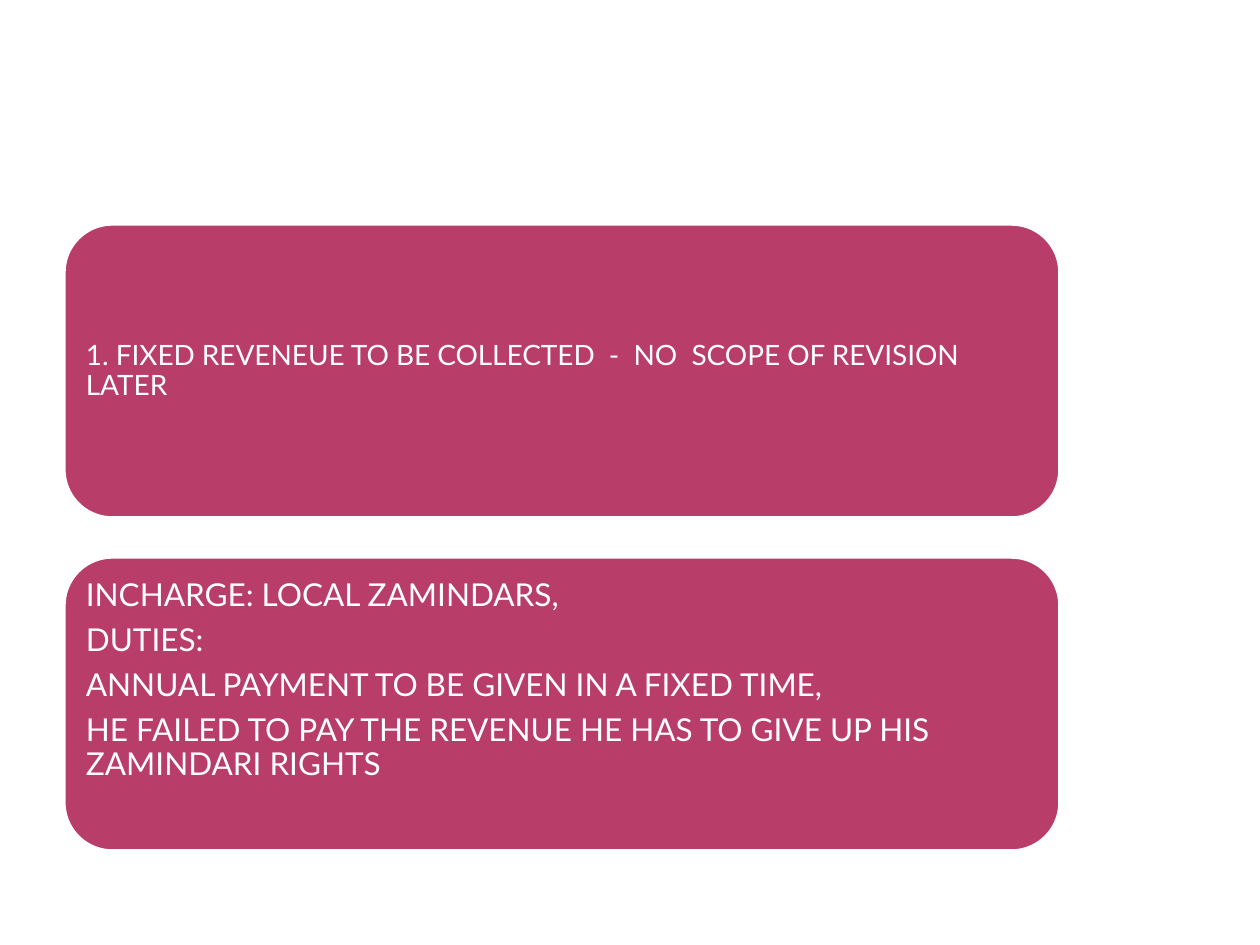
"""Build a slide with two rounded panels on fixed revenue and zamindar duties."""
from pptx import Presentation
from pptx.dml.color import RGBColor
from pptx.enum.shapes import MSO_SHAPE as Shape
from pptx.enum.text import MSO_ANCHOR as Anchor
from pptx.util import Inches, Pt

ROSE = RGBColor(0xB8, 0x3D, 0x68)
WHITE = RGBColor(0xFF, 0xFF, 0xFF)
FONT = "Lato"
SCALE = Inches(1) / 126
LEFT, TOP, WIDTH, HEIGHT = 63, 223, 998, 296
PITCH, EDGE, INSET = 333, 14, 9

PANELS = [
    (["1. FIXED REVENEUE TO BE COLLECTED  -  NO  SCOPE OF REVISION LATER"],
     16, Anchor.MIDDLE),
    (["INCHARGE: LOCAL ZAMINDARS,",
      "DUTIES:",
      "ANNUAL PAYMENT TO BE GIVEN IN A FIXED TIME,",
      "HE FAILED TO PAY THE REVENUE HE HAS TO GIVE UP HIS ZAMINDARI RIGHTS"],
     18, Anchor.TOP),
]


def px(*sizes):
    return [round(size * SCALE) for size in sizes]


def write(frame, lines, size=18, color=WHITE, font=FONT, lead=0.9, gap=0.35):
    for i, line in enumerate(lines):
        para = frame.add_paragraph() if i else frame.paragraphs[0]
        para.line_spacing = lead
        para.space_after = Pt(round(size * gap, 1))
        run = para.add_run()
        run.text = line
        run.font.name = font
        run.font.size = Pt(size)
        run.font.color.rgb = color


class Deck:
    def __init__(self):
        self.show = Presentation()
        self.show.slide_width, self.show.slide_height = px(1260, 945)
        self.slide = self.show.slides.add_slide(self.show.slide_layouts[6])

    def panel(self, *place):
        shape = self.slide.shapes.add_shape(Shape.ROUNDED_RECTANGLE, *px(*place))
        shape.shadow.inherit = False
        shape.fill.solid()
        shape.fill.fore_color.rgb = ROSE
        shape.line.color.rgb = WHITE
        shape.line.width = Pt(3.15)

    def text(self, lines, *place, anchor, **form):
        frame = self.slide.shapes.add_textbox(*px(*place)).text_frame
        frame.word_wrap = True
        frame.vertical_anchor = anchor
        (inset,) = px(INSET)
        frame.margin_left = frame.margin_right = inset
        frame.margin_top = frame.margin_bottom = inset
        write(frame, lines, **form)


def main():
    deck = Deck()
    for i, (lines, size, anchor) in enumerate(PANELS):
        top = TOP + i * PITCH
        deck.panel(LEFT, top, WIDTH, HEIGHT)
        deck.text(lines, LEFT + EDGE, top + EDGE, WIDTH - 2 * EDGE,
                  HEIGHT - 2 * EDGE, anchor=anchor, size=size)
    deck.show.save("out.pptx")


if __name__ == "__main__":
    main()
